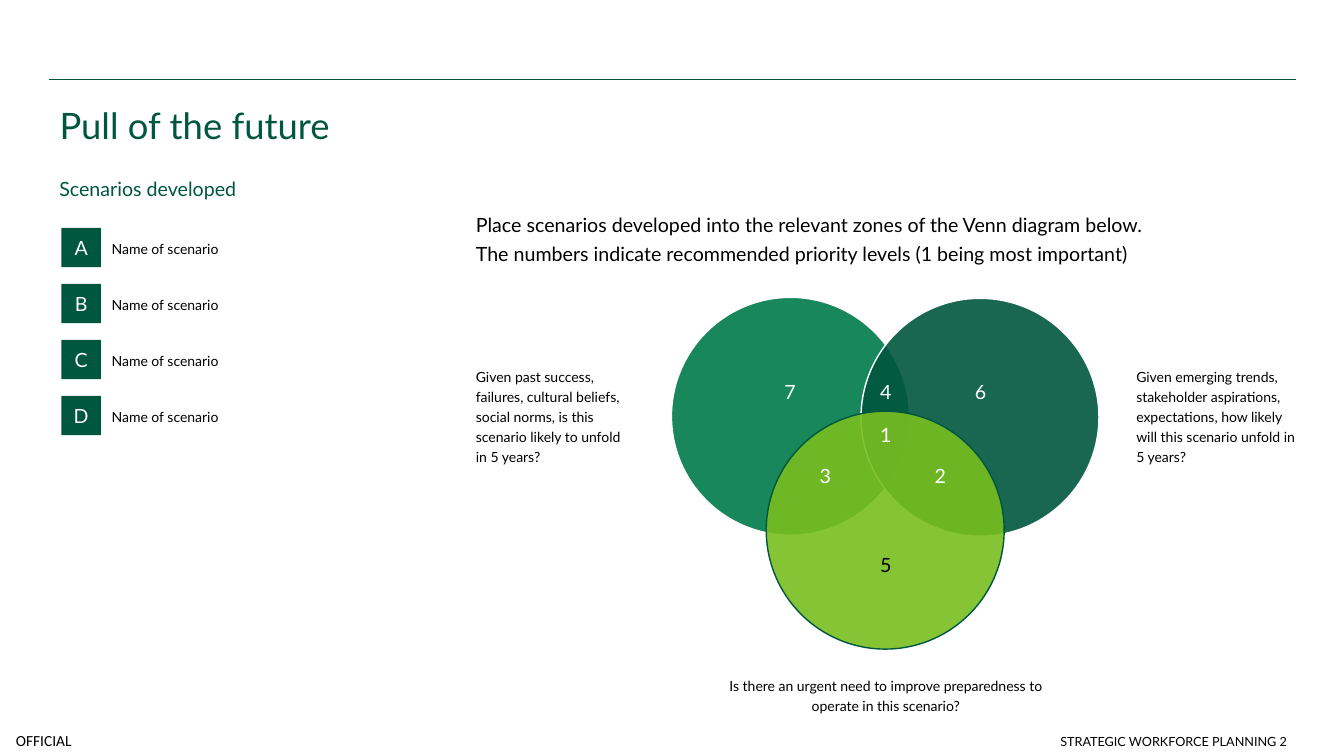
"""Build the "Pull of the future" scenario planning slide."""
from lxml import etree
from pptx import Presentation
from pptx.dml.color import RGBColor
from pptx.enum import shapes, text
from pptx.oxml import ns
from pptx.util import Inches, Pt

DARK_GREEN = RGBColor(0x00, 0x57, 0x3F)
MID_GREEN = RGBColor(0x00, 0x7B, 0x4B)
LIME = RGBColor(0x78, 0xBE, 0x20)
WHITE = RGBColor(0xFF, 0xFF, 0xFF)
BLACK = RGBColor(0x00, 0x00, 0x00)

LEFT, CENTER, RIGHT = text.PP_ALIGN.LEFT, text.PP_ALIGN.CENTER, text.PP_ALIGN.RIGHT
TOP, MIDDLE, BOTTOM = text.MSO_ANCHOR.TOP, text.MSO_ANCHOR.MIDDLE, text.MSO_ANCHOR.BOTTOM
TILE = 0.39
CIRCLE = 2.36


def write(box, words, size=10, color=BLACK, font="Lato", align=LEFT, anchor=TOP,
          inset=(0.1, 0.05), spacing=1.0, after=0):
    """Put one formatted paragraph into a shape."""
    frame = box.text_frame
    frame.word_wrap = True
    frame.auto_size = text.MSO_AUTO_SIZE.NONE
    frame.vertical_anchor = anchor
    frame.margin_left = frame.margin_right = Inches(inset[0])
    frame.margin_top = frame.margin_bottom = Inches(inset[1])
    para = frame.paragraphs[0]
    para.text = words
    para.alignment = align
    para.line_spacing = spacing
    para.space_before = Pt(0)
    para.space_after = Pt(after)
    for span in para.runs:
        span.font.name = font
        span.font.size = Pt(size)
        span.font.color.rgb = color


def add_text(page, words, left, top, width, height, **style):
    """Add a text box with one formatted paragraph."""
    box = page.shapes.add_textbox(Inches(left), Inches(top), Inches(width), Inches(height))
    write(box, words, **style)


def add_figure(page, kind, left, top, size, fill, line=None, opacity=100):
    """Add a filled shape of equal width and height."""
    figure = page.shapes.add_shape(kind, Inches(left), Inches(top), Inches(size), Inches(size))
    figure.shadow.inherit = False
    figure.fill.solid()
    figure.fill.fore_color.rgb = fill
    if opacity < 100:
        color = figure.fill._xPr.find(".//" + ns.qn("a:srgbClr"))
        etree.SubElement(color, ns.qn("a:alpha")).set("val", str(opacity * 1000))
    if line is None:
        figure.line.fill.background()
    else:
        figure.line.color.rgb = line
        figure.line.width = Pt(1)
    return figure


def add_header(page, left, top, width):
    """Place the rule, the title and the subtitle."""
    rule = page.shapes.add_connector(shapes.MSO_CONNECTOR.STRAIGHT, Inches(left), Inches(top),
                                     Inches(left + width), Inches(top))
    rule.line.color.rgb = DARK_GREEN
    rule.line.width = Pt(1)
    etree.SubElement(rule._element.spPr, ns.qn("a:effectLst"))
    title = page.shapes.title
    title.left, title.top = Inches(left), Inches(top + 0.1)
    title.width, title.height = Inches(width), Inches(1.02)
    write(title, "Pull of the future", size=26, color=DARK_GREEN, spacing=1.2)
    add_text(page, "Scenarios developed", left, top + 0.69, width, 0.79,
             size=14, color=DARK_GREEN, anchor=MIDDLE)


def add_scenarios(page, left, top, pitch):
    """List the lettered scenarios down the left side."""
    for index, letter in enumerate("ABCD"):
        row = top + index * pitch
        tile = add_figure(page, shapes.MSO_SHAPE.RECTANGLE, left, row, TILE, DARK_GREEN)
        write(tile, letter, size=14, color=WHITE, align=CENTER, anchor=MIDDLE)
        add_text(page, "Name of scenario", left + 0.4, row, 1.97, TILE,
                 anchor=MIDDLE, spacing=1.2, after=9)


def add_venn(page, left, top):
    """Draw the three overlapping circles and their priority numbers."""
    circles = [(0, 0, MID_GREEN, WHITE), (1.88, 0.01, DARK_GREEN, WHITE),
               (0.94, 1.13, LIME, DARK_GREEN)]
    for across, down, fill, line in circles:
        add_figure(page, shapes.MSO_SHAPE.OVAL, left + across, top + down, CIRCLE,
                   fill, line, opacity=90)
    numbers = [("7", 0.98, 0.74), ("6", 2.87, 0.74), ("5", 1.93, 2.46), ("4", 1.93, 0.74),
               ("3", 1.33, 1.57), ("2", 2.47, 1.57), ("1", 1.93, 1.17)]
    for number, across, down in numbers:
        add_text(page, number, left + across, top + down, TILE, TILE, size=14,
                 color=BLACK if number == "5" else WHITE, align=CENTER, anchor=MIDDLE)


def add_questions(page, left, top):
    """Place the instruction and the question beside each circle."""
    style = dict(inset=(0, 0), spacing=1.2, after=9)
    add_text(page, "Place scenarios developed into the relevant zones of the Venn diagram below. \n"
             "The numbers indicate recommended priority levels (1 being most important)",
             left, top, 8.13, 0.79, size=14, **style)
    add_text(page, "Given past success, failures, cultural beliefs, social norms, "
             "is this scenario likely to unfold in 5 years?",
             left, top + 1.55, 1.57, 1.57, **style)
    add_text(page, "Given emerging trends, stakeholder aspirations, expectations, "
             "how likely will this scenario unfold in 5 years?",
             left + 6.55, top + 1.55, 1.6, 1.57, **style)
    add_text(page, "Is there an urgent need to improve preparedness to operate in this scenario?",
             left + 2.49, top + 4.62, 3.15, 0.39, align=CENTER, **style)


def add_footer(page, top):
    """Place the classification mark and the page footer."""
    add_text(page, "OFFICIAL", 0, top + 0.1, 0.87, 0.31, size=11, font="Calibri",
             align=CENTER, anchor=MIDDLE, inset=(0, 0))
    add_text(page, "STRATEGIC WORKFORCE PLANNING 2", 6.84, top, 6.02, 0.39,
             size=9, align=RIGHT, anchor=BOTTOM)


def main():
    """Assemble and save the deck."""
    deck = Presentation()
    deck.slide_width, deck.slide_height = Inches(13.33), Inches(7.5)
    page = deck.slides.add_slide(deck.slide_layouts[5])
    add_header(page, 0.49, 0.79, 12.36)
    add_scenarios(page, 0.61, 2.26, 0.556)
    add_venn(page, 6.66, 2.95)
    add_questions(page, 4.72, 2.07)
    add_footer(page, 7.09)
    deck.save("out.pptx")


if __name__ == "__main__":
    main()
